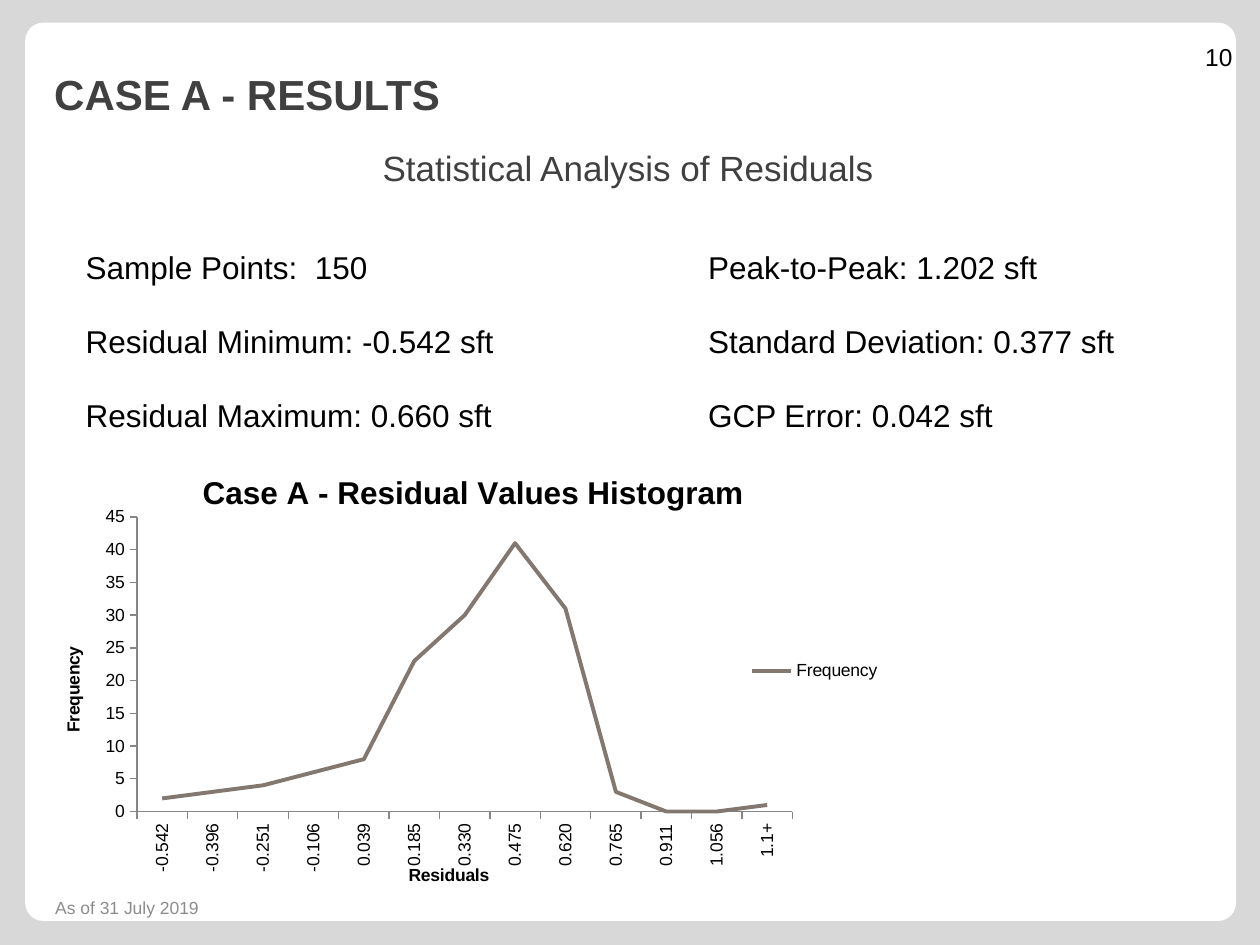
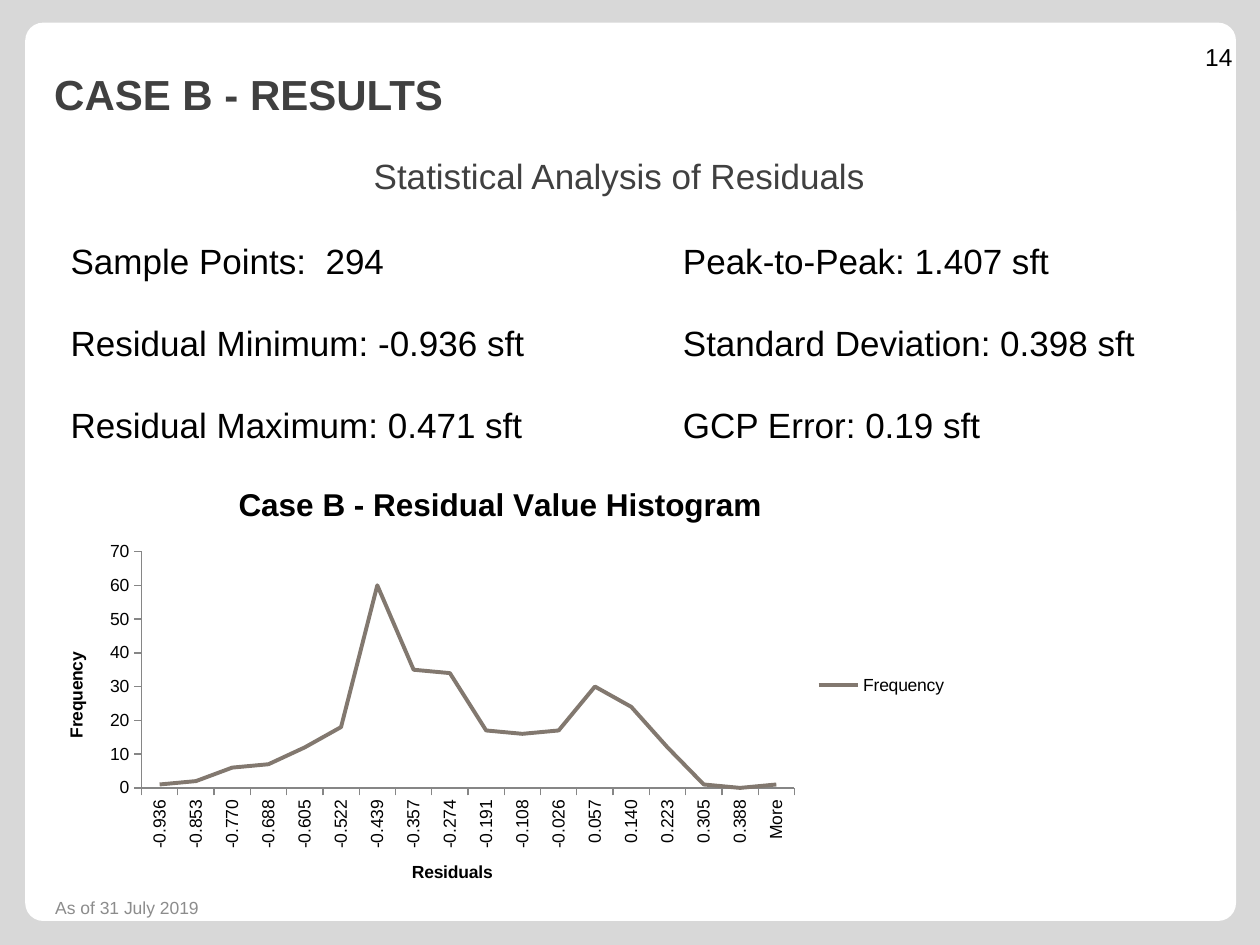
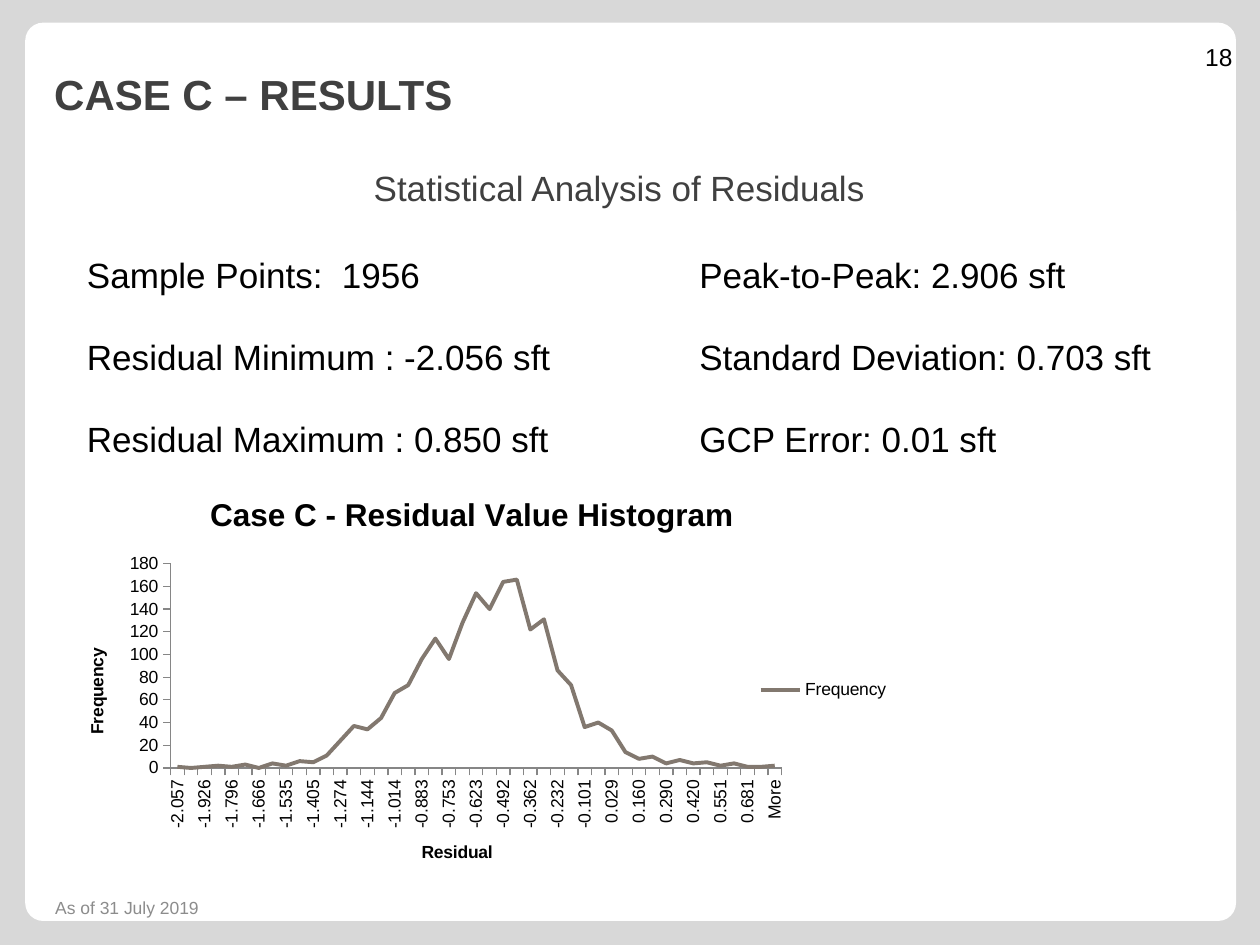
"""Build the residual-analysis result slides for cases A, B and C."""
from lxml.etree import SubElement
from pptx import Presentation
from pptx.chart.data import CategoryChartData
from pptx.dml.color import RGBColor
from pptx.enum.chart import XL_CHART_TYPE, XL_LEGEND_POSITION, XL_TICK_MARK
from pptx.enum.shapes import MSO_SHAPE
from pptx.enum.text import MSO_ANCHOR, PP_ALIGN
from pptx.oxml import parse_xml
from pptx.oxml.ns import nsdecls, qn
from pptx.util import Inches, Pt

FONT = "Arial"
BACKGROUND, PANEL, INK = "D8D8D8", "FFFFFF", "000000"
HEADING, FOOTER, AXIS, SERIES = "404040", "8C8C8C", "868686", "82786F"

CASES = [
    dict(
        title="CASE A - RESULTS", number="10", size=18,
        subtitle_at=(2.28, 1.11), left_at=(0.58, 1.92), right_at=(5.52, 1.92),
        left=["Sample Points:  150", "Residual Minimum: -0.542 sft",
              "Residual Maximum: 0.660 sft"],
        right=["Peak-to-Peak: 1.202 sft", "Standard Deviation: 0.377 sft",
               "GCP Error: 0.042 sft"],
        chart_at=(0.42, 3.58, 6.67, 3.49), plot=(0.1, 0.15, 0.78, 0.67),
        chart_title="Case A - Residual Values Histogram",
        axis_title="Residuals", scale=(45, 5),
        bins="-0.542 -0.396 -0.251 -0.106 0.039 0.185 0.330 0.475 0.620 "
             "0.765 0.911 1.056 1.1+",
        counts=[2, 3, 4, 6, 8, 23, 30, 41, 31, 3, 0, 0, 1],
    ),
    dict(
        title="CASE B - RESULTS", number="14", size=20,
        subtitle_at=(2.21, 1.18), left_at=(0.46, 1.85), right_at=(5.32, 1.85),
        left=["Sample Points:  294", "Residual Minimum: -0.936 sft",
              "Residual Maximum: 0.471 sft"],
        right=["Peak-to-Peak: 1.407 sft", "Standard Deviation: 0.398 sft",
               "GCP Error: 0.19 sft"],
        chart_at=(0.32, 3.67, 7.3, 3.54), plot=(0.11, 0.2, 0.71, 0.53),
        chart_title="Case B - Residual Value Histogram",
        axis_title="Residuals", scale=(70, 10),
        bins="-0.936 -0.853 -0.770 -0.688 -0.605 -0.522 -0.439 -0.357 -0.274 "
             "-0.191 -0.108 -0.026 0.057 0.140 0.223 0.305 0.388 More",
        counts=[1, 2, 6, 7, 12, 18, 60, 35, 34, 17, 16, 17, 30, 24, 12, 1, 0, 1],
    ),
    dict(
        title="CASE C – RESULTS", number="18", size=20,
        subtitle_at=(2.21, 1.27), left_at=(0.59, 1.96), right_at=(5.45, 1.96),
        left=["Sample Points:  1956", "Residual Minimum : -2.056 sft",
              "Residual Maximum : 0.850 sft"],
        right=["Peak-to-Peak: 2.906 sft", "Standard Deviation: 0.703 sft",
               "GCP Error: 0.01 sft"],
        chart_at=(0.33, 3.75, 6.83, 3.45), plot=(0.15, 0.21, 0.71, 0.47),
        chart_title="Case C - Residual Value Histogram",
        axis_title="Residual", scale=(180, 20),
        bins="-2.057 -1.991 -1.926 -1.861 -1.796 -1.731 -1.666 -1.600 -1.535 "
             "-1.470 -1.405 -1.340 -1.274 -1.209 -1.144 -1.079 -1.014 -0.949 "
             "-0.883 -0.818 -0.753 -0.688 -0.623 -0.557 -0.492 -0.427 -0.362 "
             "-0.297 -0.232 -0.166 -0.101 -0.036 0.029 0.094 0.160 0.225 0.290 "
             "0.355 0.420 0.486 0.551 0.616 0.681 0.746 More",
        counts=[1, 0, 1, 2, 1, 3, 0, 4, 2, 6, 5, 11, 24, 37, 34, 44, 66, 73,
                96, 114, 96, 128, 154, 140, 164, 166, 122, 131, 86, 73, 36, 40,
                33, 14, 8, 10, 4, 7, 4, 5, 2, 4, 1, 1, 2],
    ),
]


def rgb(color):
    return RGBColor.from_string(color)


def style_font(font, size, color=INK, bold=False):
    font.name, font.size, font.bold = FONT, Pt(size), bold
    font.color.rgb = rgb(color)


def place(sp, left, top, width, height):
    sp.left, sp.top = Inches(left), Inches(top)
    sp.width, sp.height = Inches(width), Inches(height)


def add_run(p, text, size, color=INK, bold=False):
    r = p.add_run()
    r.text = text
    style_font(r.font, size, color, bold)


def add_label(s, text, box, size, color=INK, align=PP_ALIGN.LEFT,
              anchor=MSO_ANCHOR.MIDDLE):
    tf = s.shapes.add_textbox(*map(Inches, box)).text_frame
    tf.word_wrap = True
    tf.vertical_anchor = anchor
    p = tf.paragraphs[0]
    p.alignment = align
    add_run(p, text, size, color)


def set_master(prs, s):
    master = prs.slide_master
    master.background.fill.solid()
    master.background.fill.fore_color.rgb = rgb(BACKGROUND)
    box = map(Inches, (0.2, 0.18, 9.61, 7.13))
    panel = s.shapes.add_shape(MSO_SHAPE.ROUNDED_RECTANGLE, *box)
    panel.adjustments[0] = 0.02
    panel.shadow.inherit = False
    panel.fill.solid()
    panel.fill.fore_color.rgb = rgb(PANEL)
    panel.line.fill.background()
    master.shapes.element.insert(2, panel.element)


def fill_title(sp, text):
    place(sp, 0.33, 0.3, 9.17, 0.88)
    sp.text_frame.vertical_anchor = MSO_ANCHOR.MIDDLE
    p = sp.text_frame.paragraphs[0]
    p.alignment = PP_ALIGN.LEFT
    add_run(p, text, 24, HEADING, bold=True)


def fill_list(sp, at, lines, size):
    place(sp, *at, 4.2, 1.75)
    tf = sp.text_frame
    for i, line in enumerate(lines):
        p = tf.add_paragraph() if i else tf.paragraphs[0]
        pPr = p._p.get_or_add_pPr()
        pPr.set("marL", "0")
        pPr.set("indent", "0")
        SubElement(pPr, qn("a:buNone"))
        p.space_before = Pt(1.15 * size if i else 0)
        add_run(p, line, size)


def set_axis(axis, title):
    axis.has_major_gridlines = False
    axis.major_tick_mark = XL_TICK_MARK.OUTSIDE
    axis.minor_tick_mark = XL_TICK_MARK.NONE
    axis.format.line.color.rgb = rgb(AXIS)
    style_font(axis.tick_labels.font, 10)
    add_run(axis.axis_title.text_frame.paragraphs[0], title, 10, bold=True)


def set_plot_layout(chart, plot):
    area = chart.element.xpath("c:chart/c:plotArea")[0]
    for old in area.findall(qn("c:layout")):
        area.remove(old)
    layout = parse_xml(
        f'<c:layout {nsdecls("c")}><c:manualLayout>'
        '<c:layoutTarget val="inner"/><c:xMode val="edge"/><c:yMode val="edge"/>'
        '</c:manualLayout></c:layout>')
    for name, value in zip("xywh", plot):
        SubElement(layout[0], qn(f"c:{name}")).set("val", str(value))
    area.insert(0, layout)


def add_histogram(s, case):
    data = CategoryChartData()
    data.categories = case["bins"].split()
    data.add_series("Frequency", case["counts"])
    box = map(Inches, case["chart_at"])
    chart = s.shapes.add_chart(XL_CHART_TYPE.LINE, *box, data).chart
    style_font(chart.font, 10)
    chart.has_title = True
    p = chart.chart_title.text_frame.paragraphs[0]
    add_run(p, case["chart_title"], 18, bold=True)
    chart.has_legend = True
    chart.legend.position = XL_LEGEND_POSITION.RIGHT
    chart.legend.include_in_layout = False

    set_axis(chart.category_axis, case["axis_title"])
    set_axis(chart.value_axis, "Frequency")
    chart.value_axis.minimum_scale = 0
    chart.value_axis.maximum_scale, chart.value_axis.major_unit = case["scale"]
    labels = chart.element.xpath("c:chart/c:plotArea/c:catAx/c:txPr/a:bodyPr")[0]
    labels.set("rot", "-5400000")
    labels.set("vert", "horz")
    set_plot_layout(chart, case["plot"])

    chart.plots[0].vary_by_categories = False
    series = chart.plots[0].series[0]
    series.smooth = False
    series.format.line.color.rgb = rgb(SERIES)
    series.format.line.width = Pt(2.25)


def add_case(s, case):
    title, left, right = s.placeholders
    fill_title(title, case["title"])
    fill_list(left, case["left_at"], case["left"], case["size"])
    fill_list(right, case["right_at"], case["right"], case["size"])
    add_label(s, case["number"], (9.08, 0.25, 0.8, 0.4), 14, align=PP_ALIGN.RIGHT)
    add_label(s, "As of 31 July 2019", (0.34, 7.08, 3.17, 0.24), 10, FOOTER)
    add_label(s, "Statistical Analysis of Residuals",
              (*case["subtitle_at"], 5.41, 0.44), 20, HEADING,
              PP_ALIGN.CENTER, MSO_ANCHOR.TOP)
    add_histogram(s, case)


def main():
    prs = Presentation()
    prs.slide_width, prs.slide_height = Inches(10), Inches(7.5)
    slides = [prs.slides.add_slide(prs.slide_layouts[3]) for _ in CASES]
    set_master(prs, slides[0])
    for s, case in zip(slides, CASES):
        add_case(s, case)
    prs.save("out.pptx")


if __name__ == "__main__":
    main()
